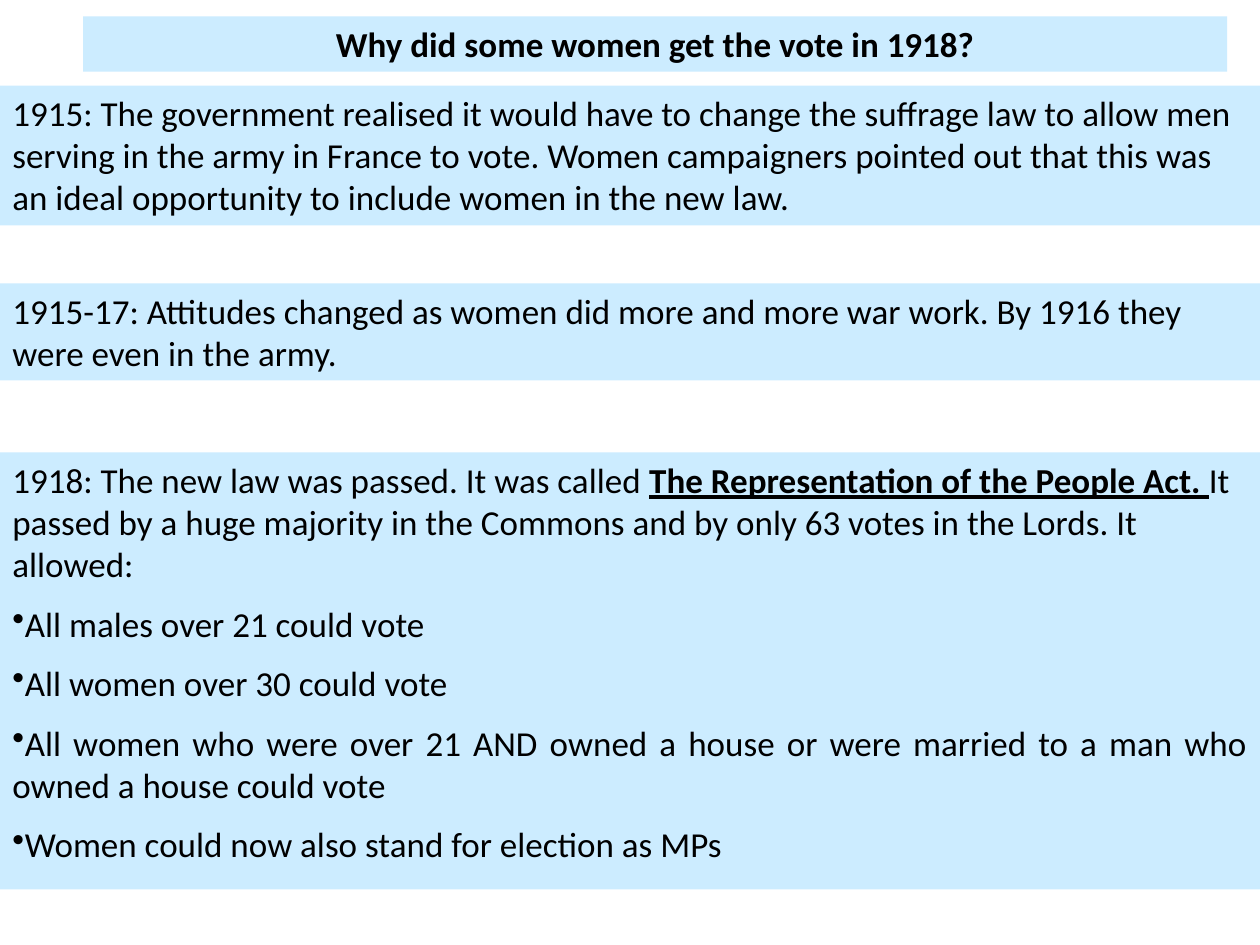
from pptx import Presentation
from pptx.dml.color import RGBColor
from pptx.enum.text import PP_ALIGN
from pptx.oxml.ns import qn
from pptx.util import Inches, Pt

LEFT, CENTER, JUSTIFY = PP_ALIGN.LEFT, PP_ALIGN.CENTER, PP_ALIGN.JUSTIFY
W, H = 10, 7.5


def color(value):
    return RGBColor.from_string(value)


def add_panel(x, y, w, h, paragraphs):
    """Add a filled text panel; paragraphs are (alignment, run texts) pairs."""
    sp = s.shapes.add_textbox(Inches(x), Inches(y), Inches(w), Inches(h))
    sp.fill.solid()
    sp.fill.fore_color.rgb = color("CCECFF")
    tf = sp.text_frame
    tf.word_wrap = True
    for i, (align, texts) in enumerate(paragraphs):
        p = tf.add_paragraph() if i else tf.paragraphs[0]
        p.alignment = align
        if i:
            p.space_before = Pt(10)
        for text in texts:
            r = p.add_run()
            r.text = text
            r.font.name = "Calibri"
            r.font.size = Pt(20)
            r.font.color.rgb = color("000000")
    return tf


prs = Presentation()
prs.slide_width, prs.slide_height = Inches(W), Inches(H)
s = prs.slides.add_slide(prs.slide_layouts[6])

title = add_panel(0.66, 0.13, 9.08, 0.44, [
    (CENTER, ["Why did some women get the vote in 1918?"])])
title.paragraphs[0].runs[0].font.bold = True

add_panel(0, 0.68, W, 1.11, [(LEFT, [
    "1915: The government realised it would have to change the suffrage law "
    "to allow men serving in the army in France to vote. Women campaigners "
    "pointed out that this was an ideal opportunity to include women in the "
    "new law."])])

add_panel(0, 2.25, W, 0.77, [(LEFT, [
    "1915-17: Attitudes changed as women did more and more war work. "
    "By 1916 they were even in the army."])])

rights = [
    "All males over 21 could vote",
    "All women over 30 could vote",
    "All women who were over 21 AND owned a house or were married to a man "
    "who owned a house could vote",
    "Women could now also stand for election as MPs",
]
law = add_panel(0, 3.59, W, 3.47, [(LEFT, [
    "1918: The new law was passed. It was called ",
    "The Representation of the People Act. ",
    "It passed by a huge majority in the Commons and by only 63 votes in the "
    "Lords. It allowed:"])] + [(JUSTIFY, [right]) for right in rights])

act = law.paragraphs[0].runs[1]
act.font.bold = True
act.font.underline = True

for p in law.paragraphs[1:]:
    pPr = p._p.get_or_add_pPr()
    bullet = pPr.makeelement(qn("a:buChar"), {"char": "•"})
    pPr.append(bullet)

prs.save("out.pptx")
